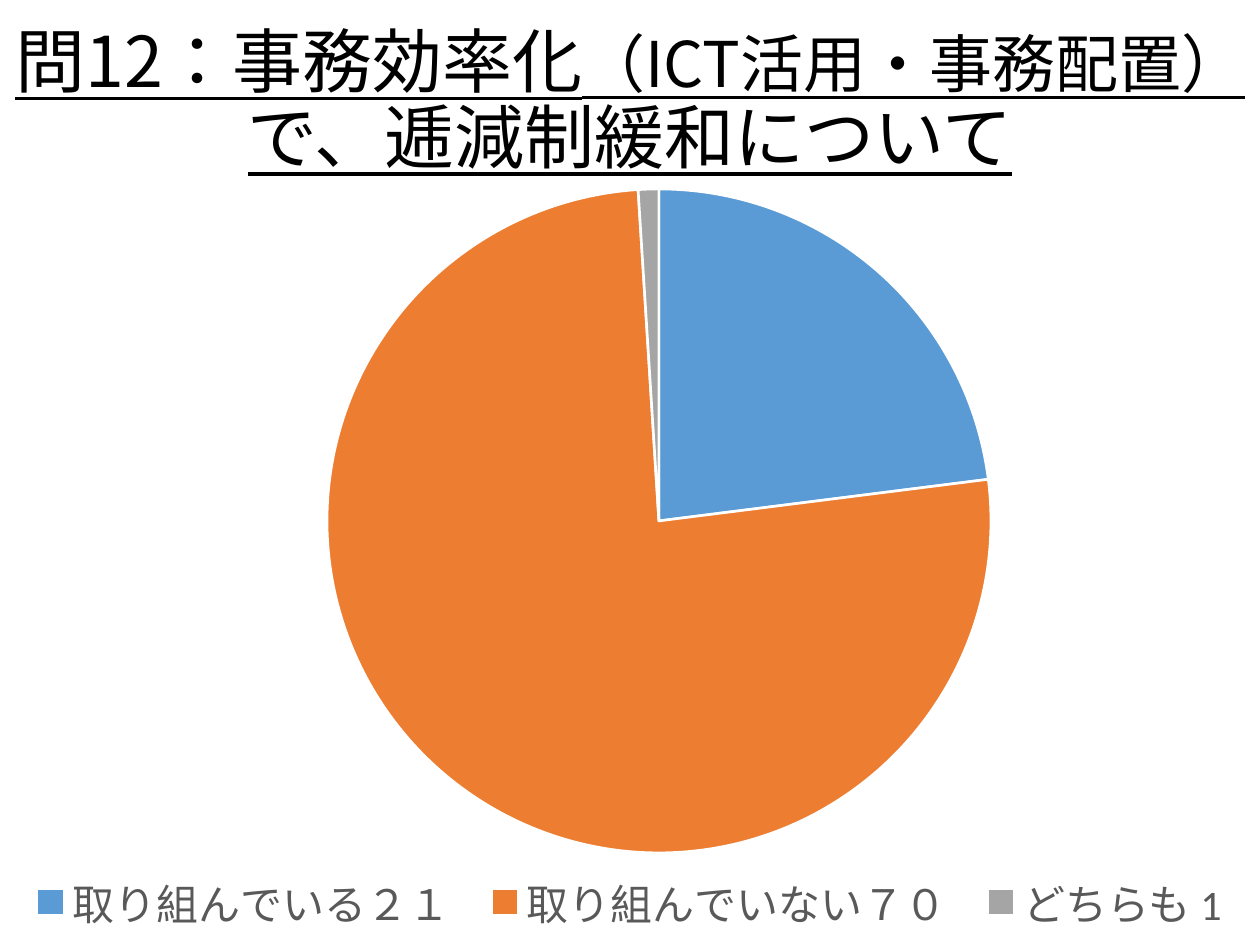
"""Build a survey slide with a pie chart on easing the gradual reduction system."""
import pptx
import pptx.chart.data
import pptx.dml.color
import pptx.enum.chart
import pptx.enum.lang
import pptx.enum.text
import pptx.oxml
import pptx.oxml.ns
import pptx.util

PX = 914400 / 126
COLORS = {
    "background": "FFFFFF",
    "title": "000000",
    "legend": "595959",
    "engaged": "5B9BD5",
    "not_engaged": "ED7D31",
    "neither": "A5A5A5",
}
TITLE_FONT = "Noto Sans CJK JP"
CHART_FONT = "Calibri"
CHART_WIDTH, CHART_HEIGHT = 1260, 775


def px(length):
    return pptx.util.Emu(round(length * PX))


def rgb(name):
    return pptx.dml.color.RGBColor.from_string(COLORS[name])


presentation = pptx.Presentation()
presentation.slide_width = px(1260)
presentation.slide_height = px(945)
slide = presentation.slides.add_slide(presentation.slide_layouts[5])
slide.background.fill.solid()
slide.background.fill.fore_color.rgb = rgb("background")

title = slide.shapes.title
title_box = {"left": px(0), "top": px(18), "width": px(1260), "height": px(170)}
for name, value in title_box.items():
    setattr(title, name, value)
frame = title.text_frame
frame_format = {
    "word_wrap": True,
    "auto_size": pptx.enum.text.MSO_AUTO_SIZE.NONE,
    "vertical_anchor": pptx.enum.text.MSO_ANCHOR.MIDDLE,
}
for name, value in frame_format.items():
    setattr(frame, name, value)
paragraph = frame.paragraphs[0]
paragraph.alignment = pptx.enum.text.PP_ALIGN.CENTER
paragraph.line_spacing = 0.9
title_parts = [
    ("問12：事務効率化", 40),
    ("（ICT活用・事務配置）", 36),
    ("で、逓減制緩和について", 40),
]
for text, size in title_parts:
    run = paragraph.add_run()
    run.text = text
    run_format = {
        "size": pptx.util.Pt(size),
        "name": TITLE_FONT,
        "underline": True,
        "language_id": pptx.enum.lang.MSO_LANGUAGE_ID.JAPANESE,
    }
    for name, value in run_format.items():
        setattr(run.font, name, value)
    run.font.color.rgb = rgb("title")
    east_asian = pptx.oxml.parse_xml(
        f'<a:ea {pptx.oxml.ns.nsdecls("a")} typeface="{TITLE_FONT}"/>'
    )
    run.font._element.find(pptx.oxml.ns.qn("a:latin")).addnext(east_asian)

answers = [
    ("取り組んでいる２１", 23, "engaged"),
    ("取り組んでいない７０", 76, "not_engaged"),
    ("どちらも 1", 1, "neither"),
]
chart_data = pptx.chart.data.CategoryChartData()
chart_data.categories = [label for label, value, color in answers]
chart_data.add_series("Series 1", [value for label, value, color in answers])
chart = slide.shapes.add_chart(
    pptx.enum.chart.XL_CHART_TYPE.PIE,
    px(0), px(170), px(CHART_WIDTH), px(CHART_HEIGHT), chart_data,
).chart
chart.has_title = False
chart.font.name = CHART_FONT
chart.font.size = pptx.util.Pt(10)
chart.font.color.rgb = rgb("title")

chart.has_legend = True
chart.legend.position = pptx.enum.chart.XL_LEGEND_POSITION.BOTTOM
chart.legend.include_in_layout = False
chart.legend.font.name = CHART_FONT
chart.legend.font.size = pptx.util.Pt(24)
chart.legend.font.color.rgb = rgb("legend")

plot = chart.plots[0]
plot.vary_by_categories = True
for index, (label, value, color) in enumerate(answers):
    slice_format = plot.series[0].points[index].format
    slice_format.fill.solid()
    slice_format.fill.fore_color.rgb = rgb(color)
    slice_format.line.color.rgb = rgb("background")
    slice_format.line.width = pptx.util.Pt(1.5)

plot_area = chart._chartSpace.chart.plotArea
legend = chart.legend._element
chart_parts = [
    (plot_area, 0, '<c:layoutTarget val="inner"/>', (327, 19, 664, 664)),
    (legend, 1, "", (10, 695, 1240, 74)),
]
for part, index, target, (left, top, width, height) in chart_parts:
    for layout in part.findall(pptx.oxml.ns.qn("c:layout")):
        part.remove(layout)
    position = {
        "x": left / CHART_WIDTH,
        "y": top / CHART_HEIGHT,
        "w": width / CHART_WIDTH,
        "h": height / CHART_HEIGHT,
    }
    sizes = "".join(f'<c:{name} val="{value}"/>' for name, value in position.items())
    part.insert(index, pptx.oxml.parse_xml(
        f'<c:layout {pptx.oxml.ns.nsdecls("c")}><c:manualLayout>{target}'
        f'<c:xMode val="edge"/><c:yMode val="edge"/>{sizes}'
        f"</c:manualLayout></c:layout>"
    ))

presentation.save("out.pptx")
